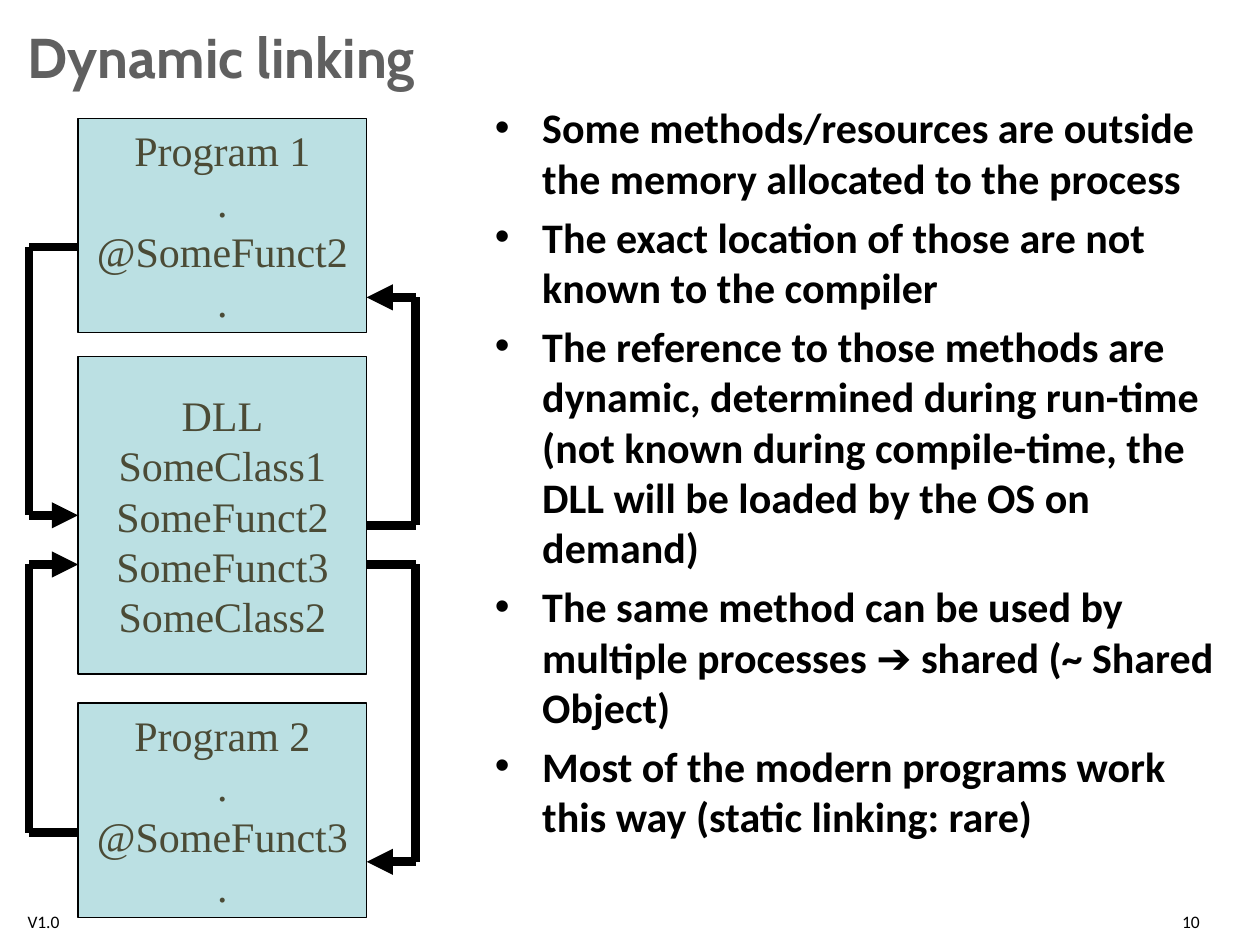
import dataclasses

import lxml.etree
import pptx
import pptx.dml.color
import pptx.enum.shapes
import pptx.enum.text
import pptx.oxml.ns
import pptx.util

ALIGN = pptx.enum.text.PP_ALIGN
ANCHOR = pptx.enum.text.MSO_ANCHOR

# The slide is a grid of square cells
COLUMNS, ROWS = 100, 75
CELL = pptx.util.Inches(0.1)


@dataclasses.dataclass(frozen=True)
class Theme:
    ink: str = "000000"
    title_ink: str = "606060"
    block_ink: str = "4B4B36"
    block_fill: str = "BBE0E3"
    title_font: str = "Cabin"
    body_font: str = "Calibri"
    block_font: str = "Times New Roman"
    title_size: int = 32
    body_size: int = 24
    footer_size: int = 10
    outline: float = 0.75
    wire: float = 5


@dataclasses.dataclass(frozen=True)
class Box:
    """A region, in columns and rows of the grid."""
    left: float
    top: float
    width: float
    height: float

    def inner(self, left, top, width, height):
        return Box(self.left + left, self.top + top, width, height)

    def lengths(self):
        return [cells(n) for n in (self.left, self.top, self.width, self.height)]


THEME = Theme()
TITLE_STYLE = {"name": THEME.title_font, "size": THEME.title_size,
               "color": THEME.title_ink, "bold": True}
BODY_STYLE = {"name": THEME.body_font, "size": THEME.body_size,
              "color": THEME.ink, "bold": True}
FOOTER_STYLE = {"name": THEME.body_font, "size": THEME.footer_size,
                "color": THEME.ink, "bold": False}
BLOCK_STYLE = {"name": THEME.block_font, "size": THEME.body_size,
               "color": THEME.block_ink, "bold": False}


def cells(count):
    return pptx.util.Emu(round(count * CELL))


def rgb(value):
    return pptx.dml.color.RGBColor.from_string(value)


def add_bullet(paragraph, indent):
    properties = paragraph._p.get_or_add_pPr()
    properties.set("marL", str(indent))
    properties.set("indent", str(-indent))
    for tag, key, value in (("a:buFont", "typeface", "Arial"),
                            ("a:buChar", "char", "•")):
        lxml.etree.SubElement(properties, pptx.oxml.ns.qn(tag)).set(key, value)


def write(frame, lines, style, align=ALIGN.LEFT, anchor=ANCHOR.TOP,
          wrap=True, bullet_indent=None, gap=0):
    frame.word_wrap = wrap
    frame.vertical_anchor = anchor
    for index, line in enumerate(lines):
        paragraph = frame.add_paragraph() if index else frame.paragraphs[0]
        paragraph.text = line
        paragraph.alignment = align
        if index and gap:
            paragraph.space_before = pptx.util.Pt(gap)
        if bullet_indent:
            add_bullet(paragraph, bullet_indent)
        values = {**style, "size": pptx.util.Pt(style["size"])}
        paragraph.font.color.rgb = rgb(values.pop("color"))
        for name, value in values.items():
            setattr(paragraph.font, name, value)


def add_text(slide, box, lines, style, **layout):
    shape = slide.shapes.add_textbox(*box.lengths())
    write(shape.text_frame, lines, style, **layout)


def add_block(slide, box, lines):
    shape = slide.shapes.add_shape(
        pptx.enum.shapes.MSO_SHAPE.RECTANGLE, *box.lengths())
    shape.shadow.inherit = False
    shape.fill.solid()
    shape.fill.fore_color.rgb = rgb(THEME.block_fill)
    shape.line.color.rgb = rgb(THEME.ink)
    shape.line.width = pptx.util.Pt(THEME.outline)
    write(shape.text_frame, lines, BLOCK_STYLE, align=ALIGN.CENTER,
          anchor=ANCHOR.MIDDLE, wrap=False)


def add_wire(slide, start, end, arrow=False):
    line = slide.shapes.add_connector(
        pptx.enum.shapes.MSO_CONNECTOR.STRAIGHT,
        *[cells(value) for value in (*start, *end)])
    line.line.color.rgb = rgb(THEME.ink)
    line.line.width = pptx.util.Pt(THEME.wire)
    if arrow:
        tail = lxml.etree.SubElement(
            line.line._get_or_add_ln(), pptx.oxml.ns.qn("a:tailEnd"))
        tail.set("type", "triangle")
    lxml.etree.SubElement(line._element.spPr, pptx.oxml.ns.qn("a:effectLst"))


def add_route(slide, edge, rail, start_row, end_row):
    """Leave a block sideways, follow the rail, and point back at a block."""
    points = [(edge, start_row), (rail, start_row),
              (rail, end_row), (edge, end_row)]
    for index, (start, end) in enumerate(zip(points, points[1:])):
        add_wire(slide, start, end, arrow=index == 2)


def build_diagram(slide, box):
    margin, block_width = 3.9, 22.9
    left_edge = box.left + margin
    right_edge = left_edge + block_width
    right_rail = box.left + box.width

    # Programs at the ends
    program_height = 17
    for number, function, top in ((1, 2, 0),
                                  (2, 3, box.height - program_height)):
        add_block(slide, box.inner(margin, top, block_width, program_height),
                  [f"Program {number}", ".", f"@SomeFunct{function}", "."])

    # Calls on the left, returns on the right
    for edge, rail, start, end in ((left_edge, box.left, 10.2, 31.5),
                                   (right_edge, right_rail, 32.3, 14.2),
                                   (left_edge, box.left, 56.7, 35.4),
                                   (right_edge, right_rail, 35.4, 59)):
        add_route(slide, edge, rail, box.top + start, box.top + end)

    # Shared library between them
    add_block(slide, box.inner(margin, 18.9, block_width, 25.2),
              ["DLL", "SomeClass1", "SomeFunct2", "SomeFunct3", "SomeClass2"])


def build_title(slide, box):
    add_text(slide, box, ["Dynamic linking"], TITLE_STYLE,
             anchor=ANCHOR.MIDDLE)


def build_points(slide, box):
    add_text(slide, box, [
        "Some methods/resources are outside the memory allocated to the process",
        "The exact location of those are not known to the compiler",
        "The reference to those methods are dynamic, determined during run-time "
        "(not known during compile-time, the DLL will be loaded by the OS on demand)",
        "The same method can be used by multiple processes ➔ shared (~ Shared Object)",
        "Most of the modern programs work this way (static linking: rare)",
    ], BODY_STYLE, bullet_indent=cells(3.75), gap=0.2 * THEME.body_size)


def build_footer(slide, box):
    number_width = 13.1
    add_text(slide, box.inner(0, 0, 7.9, box.height), ["V1.0"], FOOTER_STYLE)
    add_text(slide, box.inner(box.width - number_width, 0, number_width, box.height),
             ["10"], FOOTER_STYLE, align=ALIGN.RIGHT)


def main():
    presentation = pptx.Presentation()
    presentation.slide_width = cells(COLUMNS)
    presentation.slide_height = cells(ROWS)
    slide = presentation.slides.add_slide(presentation.slide_layouts[6])
    build_footer(slide, Box(1.2, 71.8, 95, 2))
    build_title(slide, Box(1.2, 1.3, 97.6, 6.3))
    build_points(slide, Box(38.3, 7.6, 60.5, 63))
    build_diagram(slide, Box(2.3, 9.4, 30.7, 63.4))
    presentation.save("out.pptx")


if __name__ == "__main__":
    main()
